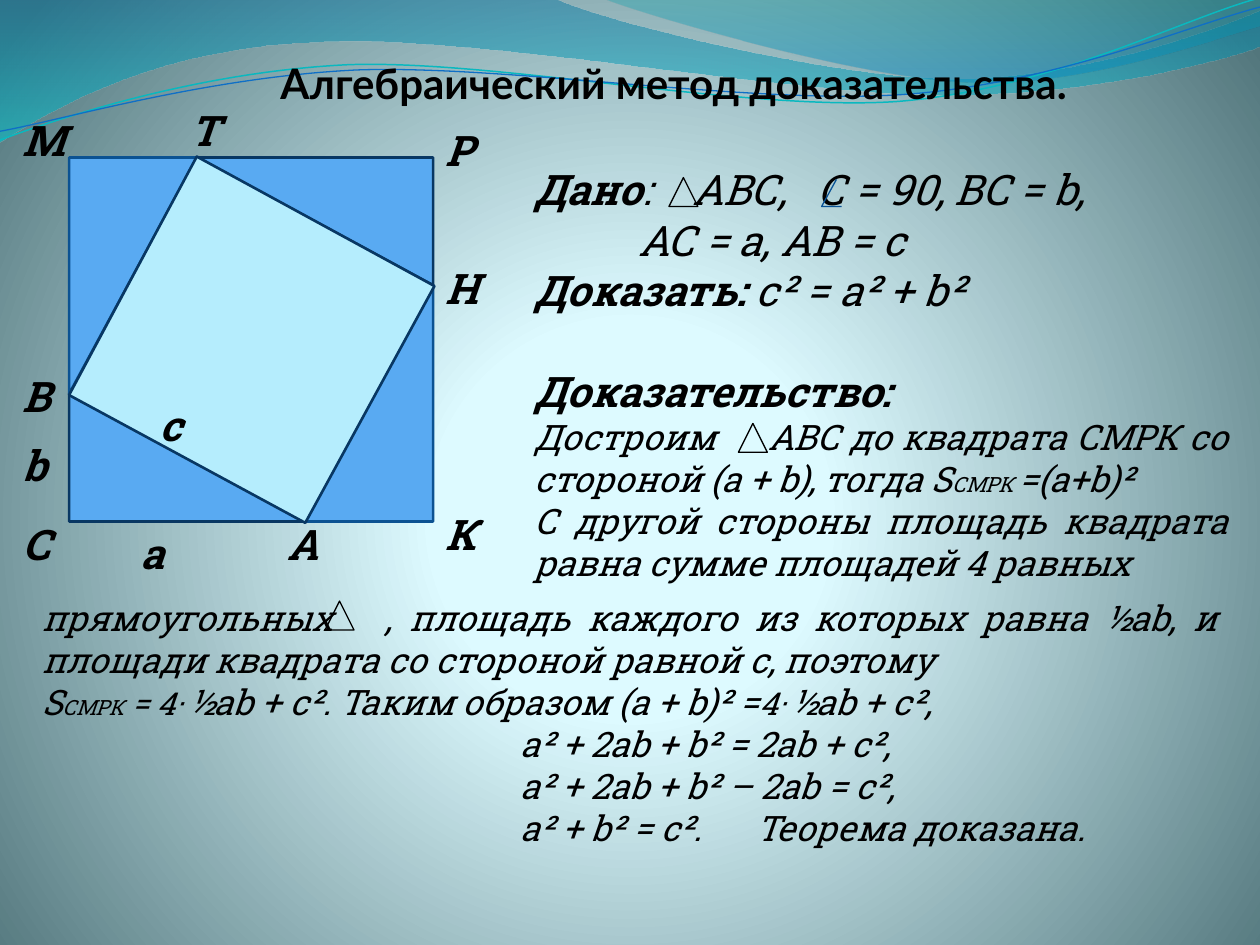
import math

from lxml import etree
from pptx import Presentation
from pptx import util as u
from pptx.dml.color import RGBColor
from pptx.enum import shapes, text
from pptx.oxml.ns import nsdecls, qn

Pt = u.Pt
COLORS = {
    "text": "000000", "triangle": "59AAF2", "square": "B5EDFD",
    "edge_dark": "083763", "edge": "0B5292", "angle": "095295",
    "glow": "DEFBFF", "glow_mid": "DDFAFF", "rim": "52767C",
    "wave_deep": "0074A1", "wave_cyan": "00C6CF", "wave_teal": "00A1A9",
    "wave_blue": "008BBF", "thread_cyan": "0AB8BF", "thread_blue": "0F6FC6",
}
SERIF = "Roboto Slab"
LEFT, CENTER, JUSTIFY = (text.PP_ALIGN.LEFT, text.PP_ALIGN.CENTER,
                         text.PP_ALIGN.JUSTIFY)


def rgb(name):
    return RGBColor.from_string(COLORS[name])


def set_gradient(parent, stops, direction):
    """Swap the solid fill in parent for a gradient of (place, colour, opacity)."""
    marks = "".join(
        f'<a:gs pos="{place * 1000}"><a:srgbClr val="{COLORS[name]}">'
        f'<a:alpha val="{opacity * 1000}"/></a:srgbClr></a:gs>'
        for place, name, opacity in stops)
    fill = etree.fromstring(f'<a:gradFill {nsdecls("a")} rotWithShape="1">'
                            f'<a:gsLst>{marks}</a:gsLst>{direction}</a:gradFill>')
    parent.replace(parent.find(qn("a:solidFill")), fill)


def style(shape, fill=None, line=None, width=0.75):
    shape.shadow.inherit = False
    if fill:
        shape.fill.solid()
        shape.fill.fore_color.rgb = rgb(fill)
    else:
        shape.fill.background()
    if line:
        shape.line.color.rgb = rgb(line)
        shape.line.width = Pt(width)
    else:
        shape.line.fill.background()
    return shape


def add_outline(page, points, closed=True):
    (x, y), *rest = points
    builder = page.shapes.build_freeform(Pt(x), Pt(y))
    builder.add_line_segments([(Pt(a), Pt(b)) for a, b in rest], close=closed)
    return builder.convert_to_shape()


def add_curve(page, bounds, start, segments, rotation=0, closed=True):
    """Outline of lines (one point) and cubic curves (three points)."""
    x, y, w, h = bounds
    shape = add_outline(page, [(x, y), (x + w, y), (x + w, y + h), (x, y + h)])
    shape.rotation = rotation
    turn = math.radians(-rotation)
    track = next(shape._element.iter(qn("a:path")))
    for child in list(track):
        track.remove(child)

    def add_step(tag, points):
        step = etree.SubElement(track, qn(tag))
        for px, py in points:
            dx, dy = px - x - w / 2, py - y - h / 2
            etree.SubElement(
                step, qn("a:pt"),
                x=str(Pt(dx * math.cos(turn) - dy * math.sin(turn) + w / 2)),
                y=str(Pt(dx * math.sin(turn) + dy * math.cos(turn) + h / 2)))

    add_step("a:moveTo", [start])
    for segment in segments:
        add_step("a:lnTo" if len(segment) == 1 else "a:cubicBezTo", segment)
    if closed:
        etree.SubElement(track, qn("a:close"))
    return shape


def add_text(page, bounds, paragraphs, font=SERIF, italic=True,
             insets=(7.2, 3.6, 7.2, 3.6), anchor=text.MSO_ANCHOR.TOP):
    """Each paragraph: (runs, options); each run: (words, size, bold)."""
    box = page.shapes.add_textbox(*map(Pt, bounds))
    frame = box.text_frame
    frame.word_wrap = True
    frame.vertical_anchor = anchor
    (frame.margin_left, frame.margin_top,
     frame.margin_right, frame.margin_bottom) = map(Pt, insets)
    for i, (runs, options) in enumerate(paragraphs):
        para = frame.paragraphs[0] if i == 0 else frame.add_paragraph()
        para.alignment = options.get("align", JUSTIFY)
        para.space_before = Pt(options.get("before", 0))
        props = para._p.get_or_add_pPr()
        if "indent" in options:
            props.set("indent", str(Pt(options["indent"])))
        if "tabs" in options:
            stops = etree.SubElement(props, qn("a:tabLst"))
            for place in options["tabs"]:
                etree.SubElement(stops, qn("a:tab"), pos=str(Pt(place)), algn="l")
        for words, size, bold in runs:
            span = para.add_run()
            span.text = words
            span.font.name, span.font.size = font, Pt(size)
            span.font.bold, span.font.italic = bold, italic
            span.font.color.rgb = rgb("text")


def add_backdrop(page):
    page.background.fill.solid()
    set_gradient(page._element.cSld.find(qn("p:bg")).find(qn("p:bgPr")),
                 [(0, "glow", 100), (25, "glow_mid", 100), (100, "rim", 100)],
                 '<a:path path="circle"><a:fillToRect l="10000" t="110000" '
                 'r="10000" b="100000"/></a:path>')
    # Translucent waves
    waves = [
        ((-0.7, -0.7, 721.4, 82), (0, 0),
         [((317, -0.7),), ((343, 12), (478, 45), (546, 45)),
          ((614, 45), (690, 19), (720, 6)), ((720.7, 26),),
          ((708, 32), (626, 55), (537, 54)), ((448, 54), (275, 20), (185, 24)),
          ((93, 26), (33, 60), (-0.7, 81.3)), ((0, 0),)],
         [(0, "wave_deep", 45), (100, "wave_cyan", 55)]),
        ((345, -0.7, 375, 50.4), (345, -0.7),
         [((366, 8), (491, 45), (554, 47)), ((616, 50), (692, 23), (720, 15)),
          ((720, 0),), ((345, -0.7),)],
         [(0, "wave_teal", 30), (80, "wave_blue", 45)]),
    ]
    for bounds, start, segments, stops in waves:
        wave = style(add_curve(page, bounds, start, segments), fill=stops[0][1])
        set_gradient(wave._element.spPr, stops, '<a:lin ang="5400000" scaled="1"/>')
    # Thin threads
    threads = [
        ("thread_cyan", 0.85, (-1.4, 16, 721.4, 51), (0, 80),
         [((35, 67), (114, 41), (199, 37)), ((284, 34), (427, 64), (513, 58)),
          ((600, 51), (675, 11), (719, -1))]),
        ("thread_blue", 0.75, (-1.4, 21.6, 722, 41.8), (0, 75),
         [((34, 69), (118, 44), (204, 40)), ((290, 37), (430, 60), (516, 54)),
          ((602, 48), (678, 15), (720, 4))]),
    ]
    for color, width, bounds, start, segments in threads:
        style(add_curve(page, bounds, start, segments, rotation=357.3, closed=False),
              line=color, width=width)


def add_title(page, bounds):
    words = "Алгебраический метод доказательства."
    add_text(page, bounds, [([(words, 24, True)], {"align": CENTER, "indent": 27.4})],
             font="Lato", italic=False, insets=(7.2, 12.24, 7.2, 2.88),
             anchor=text.MSO_ANCHOR.MIDDLE)


def add_figure(page, left, top, long_leg, short_leg):
    side = long_leg + short_leg
    right, bottom = left + side, top + side
    # Four equal triangles, turned about the centre of the big square
    dx, dy = (long_leg - side) / 2, (side - short_leg) / 2
    turned = {0: (dx, dy), 270: (dy, -dx), 90: (-dy, dx), 180: (-dx, -dy)}
    for angle, (x, y) in turned.items():
        triangle = page.shapes.add_shape(
            shapes.MSO_SHAPE.RIGHT_TRIANGLE,
            Pt(left + side / 2 + x - long_leg / 2),
            Pt(top + side / 2 + y - short_leg / 2), Pt(long_leg), Pt(short_leg))
        triangle.rotation = angle
        style(triangle, "triangle", "edge" if angle % 180 else "edge_dark", 1.5)
    # Inner square on the hypotenuses, reaching slightly over the edge
    corners = [(left + long_leg, bottom + 0.8), (left, bottom - short_leg + 0.8),
               (left + short_leg, top - 0.5), (right + 0.8, top + short_leg + 0.5)]
    style(add_outline(page, corners), "square", "edge_dark", 1.5)
    # Vertex and side labels
    labels = [("а", 73.5, 298), ("С", 0, 292.5), ("А", 157.4, 292.5),
              ("В", 0, 208), ("b", 0, 247.5), ("c", 84.2, 224.6),
              ("М", 0, 62), ("К", 241.6, 286.8), ("Р", 241.6, 67.5),
              ("Т", 95.6, 56), ("Н", 241.6, 146.4)]
    for name, x, y in labels:
        inside = name in "аАc"
        add_text(page, (x, y, 31 if inside else 48, 36),
                 [([(name, 24, True)], {})],
                 insets=(7.2 if inside else 13, 3.6, 7.2, 3.6))


def add_statement(page, bounds):
    add_text(page, bounds, [
        ([("Дано", 24, True), (":\tАВС,\tС = 90, ВС = b,", 24, False)],
         {"align": LEFT, "tabs": (90.5, 161.8)}),
        ([("\tАС = а, АВ = с", 24, False)], {"align": LEFT, "tabs": (59.5,)}),
        ([("Доказать: ", 24, True), ("с² = а² + b²", 24, False)], {}),
        ([("Доказательство:", 24, True)], {"before": 28.8}),
        ([("Достроим\tАВС до квадрата СМРК со стороной (а + b), тогда S", 20, False),
          ("СМРК ", 12, False), ("=(а+b)²", 20, False)], {"tabs": (133.5,)}),
        ([("С другой стороны площадь квадрата равна сумме площадей 4 равных",
           20, False)], {}),
    ])


def add_conclusion(page, bounds):
    formula_tabs = {"align": LEFT, "tabs": (273.3, 408)}
    formulas = ["а² + 2аb + b² = 2аb + c²,", "а² + 2аb + b² – 2аb = c²,",
                "а² + b² = c².\tТеорема доказана."]
    add_text(page, bounds, [
        ([("прямоугольных\t, площадь каждого из которых равна ½аb, и площади "
           "квадрата со стороной равной с, поэтому", 20, False)], {"tabs": (196,)}),
        ([("S", 20, False), ("СМРК", 12, False), (" = 4·", 18, False),
          (" ", 12, False), ("½аb + с². Таким образом (а + b)² =", 20, False),
          ("4·", 18, False), (" ", 12, False), ("½аb + с²,", 20, False)], {}),
        *[([("\t" + words, 20, False)], formula_tabs) for words in formulas],
    ])


def add_signs(page):
    # Triangle signs within the text
    for x, y in [(382.3, 101.5), (422, 242), (185.8, 343.5)]:
        style(page.shapes.add_shape(shapes.MSO_SHAPE.ISOSCELES_TRIANGLE, Pt(x), Pt(y),
                                    Pt(16.5), Pt(16.5)), line="text")
    # Angle sign
    style(add_outline(page, [(478, 102.5), (469.5, 118), (481, 118)], closed=False),
          line="angle")


def main():
    deck = Presentation()
    deck.slide_width, deck.slide_height = Pt(720), Pt(540)
    page = deck.slides.add_slide(deck.slide_layouts[6])
    add_backdrop(page)
    add_title(page, (36.7, 20.4, 669, 44))
    add_figure(page, 39.5, 90, 135, 73)
    add_statement(page, (298.2, 90, 410.5, 250))
    add_conclusion(page, (16.8, 337.5, 686, 152.5))
    add_signs(page)
    deck.save("out.pptx")


if __name__ == "__main__":
    main()
